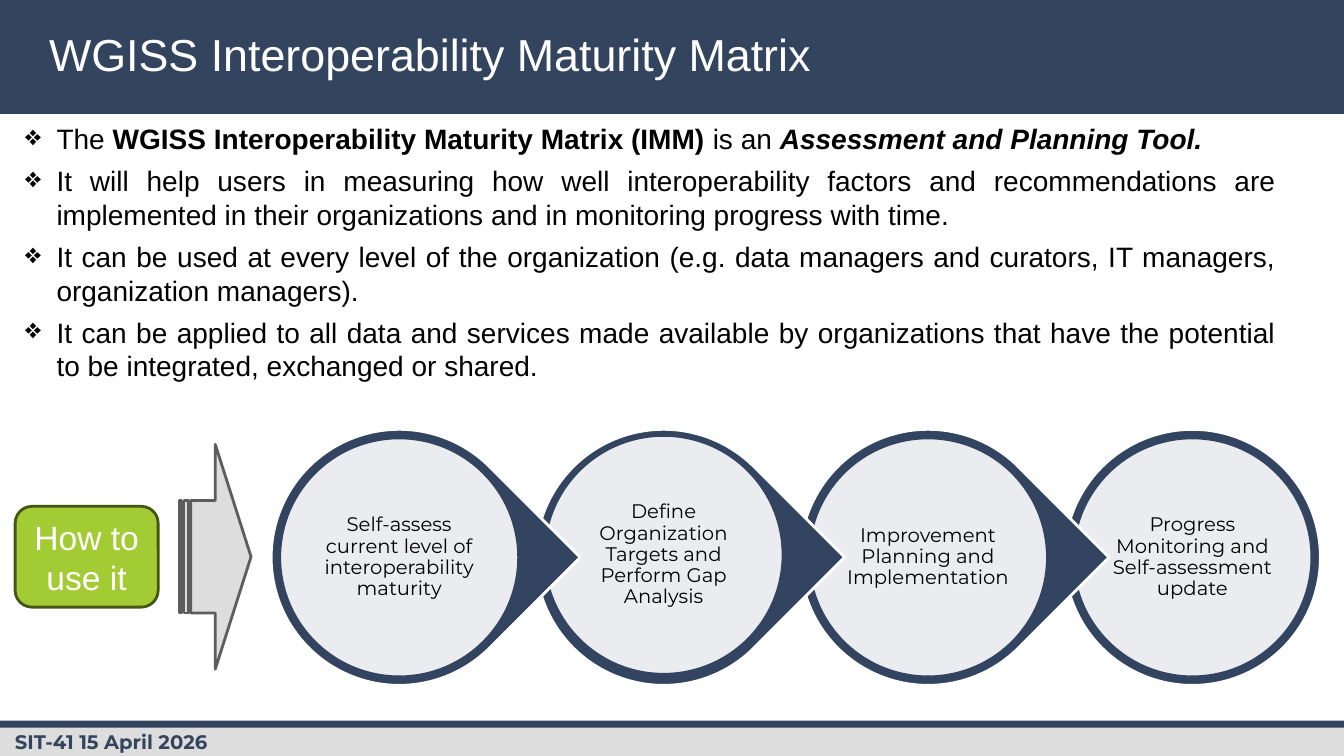
from lxml.etree import SubElement
from pptx import Presentation
from pptx.dml.color import RGBColor
from pptx.enum.shapes import MSO_SHAPE
from pptx.enum.text import MSO_ANCHOR, PP_ALIGN
from pptx.oxml.ns import qn
from pptx.util import Pt

HUES = {
    "navy": "33445F", "ring": "32445F", "grey": "DDDDDD", "edge": "5D5D5D",
    "lime": "A3CB34", "moss": "445515", "white": "FFFFFF", "black": "000000",
}
POINTS = [
    [("The ", ""), ("WGISS Interoperability Maturity Matrix (IMM)", "b"),
     (" is an ", ""), ("Assessment and Planning Tool.", "bi")],
    [("It will help users in measuring how well interoperability factors and "
      "recommendations are implemented in their organizations and in "
      "monitoring progress with time.", "")],
    [("It can be used at every level of the organization (e.g. data managers "
      "and curators, IT managers, organization managers).", "")],
    [("It can be applied to all data and services made available by "
      "organizations that have the potential to be integrated, exchanged or "
      "shared.", "")],
]
STEPS = [
    ("Self-assess current level of interoperability maturity", 0),
    ("Define Organization Targets and Perform Gap Analysis", -1.8),
    ("Improvement Planning and Implementation", 0),
    ("Progress Monitoring and Self-assessment update", 0),
]


def hue(name):
    return RGBColor.from_string(HUES[name])


def style(run, size, name, color, bold=False, slant=False):
    font = run.font
    font.size, font.name = Pt(size), name
    font.bold, font.italic = bold, slant
    font.color.rgb = hue(color)


def draw(slide, kind, box, fill, line=None):
    shape = slide.shapes.add_shape(kind, *map(Pt, box))
    shape.shadow.inherit = False
    shape.fill.solid()
    shape.fill.fore_color.rgb = hue(fill)
    if line:
        shape.line.color.rgb = hue(line)
        shape.line.width = Pt(2)
    else:
        shape.line.fill.background()
    return shape


def frame(slide, box):
    text = slide.shapes.add_textbox(*map(Pt, box)).text_frame
    text.word_wrap = True
    return text


def put(text, words, size, name, color, space=None, align=None, bold=False):
    text.text = words
    para = text.paragraphs[0]
    para.alignment = align
    para.line_spacing = space
    style(para.runs[0], size, name, color, bold)


def header(slide, box):
    x, y, w, h = box
    draw(slide, MSO_SHAPE.RECTANGLE, box, "navy")
    text = frame(slide, (x + 28, y + 20, 740, 44))
    put(text, "WGISS Interoperability Maturity Matrix", 32, "Arial", "white", 0.9)


def footer(slide, box):
    x, y, w, h = box
    draw(slide, MSO_SHAPE.RECTANGLE, (x, y + 3, w, h - 3), "grey")
    draw(slide, MSO_SHAPE.RECTANGLE, (x, y, w, 5), "navy")
    text = frame(slide, (x + 3.6, y + 0.8, 485, 25))
    put(text, "SIT-41 15 April 2026", 14, "Montserrat", "navy", 1.15, bold=True)


def bullet(para):
    props = para._p.get_or_add_pPr()
    props.set("marL", str(Pt(22.5)))
    props.set("indent", str(-Pt(22.5)))
    tint = SubElement(props, qn("a:buClr"))
    SubElement(tint, qn("a:srgbClr"), val=HUES["black"])
    SubElement(props, qn("a:buChar"), char="❖")


def body(slide, box):
    text = frame(slide, box)
    for i, parts in enumerate(POINTS):
        para = text.add_paragraph() if i else text.paragraphs[0]
        bullet(para)
        para.alignment = PP_ALIGN.JUSTIFY
        if i:
            para.space_before = Pt(6)
        for words, marks in parts:
            run = para.add_run()
            run.text = words
            style(run, 20, "Arial", "black", "b" in marks, "i" in marks)


def inset(box, gap, drop=0):
    x, y, w, h = box
    return x + gap, y + gap + drop, w - 2 * gap, h - 2 * gap


def step(slide, box, words, drop, last):
    kind = MSO_SHAPE.OVAL if last else MSO_SHAPE.TEAR
    drop_shape = draw(slide, kind, box, "ring", "white")
    if not last:
        drop_shape.rotation = 45
    disc = draw(slide, MSO_SHAPE.OVAL, inset(box, 6.1, drop), "white", "ring")
    tint = disc.fill._xPr.find(qn("a:solidFill"))[0]
    SubElement(tint, qn("a:alpha"), val="90000")
    text = frame(slide, inset(box, 30.6, drop))
    text.margin_left = text.margin_right = Pt(1.4)
    text.margin_top = text.margin_bottom = Pt(1.4)
    text.vertical_anchor = MSO_ANCHOR.MIDDLE
    put(text, words, 14, "Montserrat", "black", 0.9, PP_ALIGN.CENTER)


def chain(slide, box):
    x, y, w, h = box
    last = len(STEPS) - 1
    pitch = (w - h) / last
    for i in range(last, -1, -1):
        words, drop = STEPS[i]
        step(slide, (x + i * pitch, y, h, h), words, drop, i == last)


def guide(slide, box):
    x, y, w, h = box
    tag = draw(slide, MSO_SHAPE.ROUNDED_RECTANGLE,
               (x, y + (h - 72) / 2, 102.2, 72), "lime", "moss")
    text = tag.text_frame
    text.word_wrap = True
    text.vertical_anchor = MSO_ANCHOR.MIDDLE
    put(text, "How to use it", 24, "Arial", "white", align=PP_ALIGN.CENTER)
    draw(slide, MSO_SHAPE.STRIPED_RIGHT_ARROW,
         (x + w - 51.1, y, 51.1, h), "grey", "edge")


def main():
    deck = Presentation()
    deck.slide_width, deck.slide_height = Pt(960), Pt(540)
    slide = deck.slides.add_slide(deck.slide_layouts[6])
    header(slide, (0, 0, 960, 81.4))
    footer(slide, (0, 514.8, 960, 25.2))
    body(slide, (10.8, 83.5, 908, 193))
    chain(slide, (193.7, 306.7, 749.5, 182.9))
    guide(slide, (10.8, 317.4, 168.5, 160.6))
    deck.save("out.pptx")


if __name__ == "__main__":
    main()
